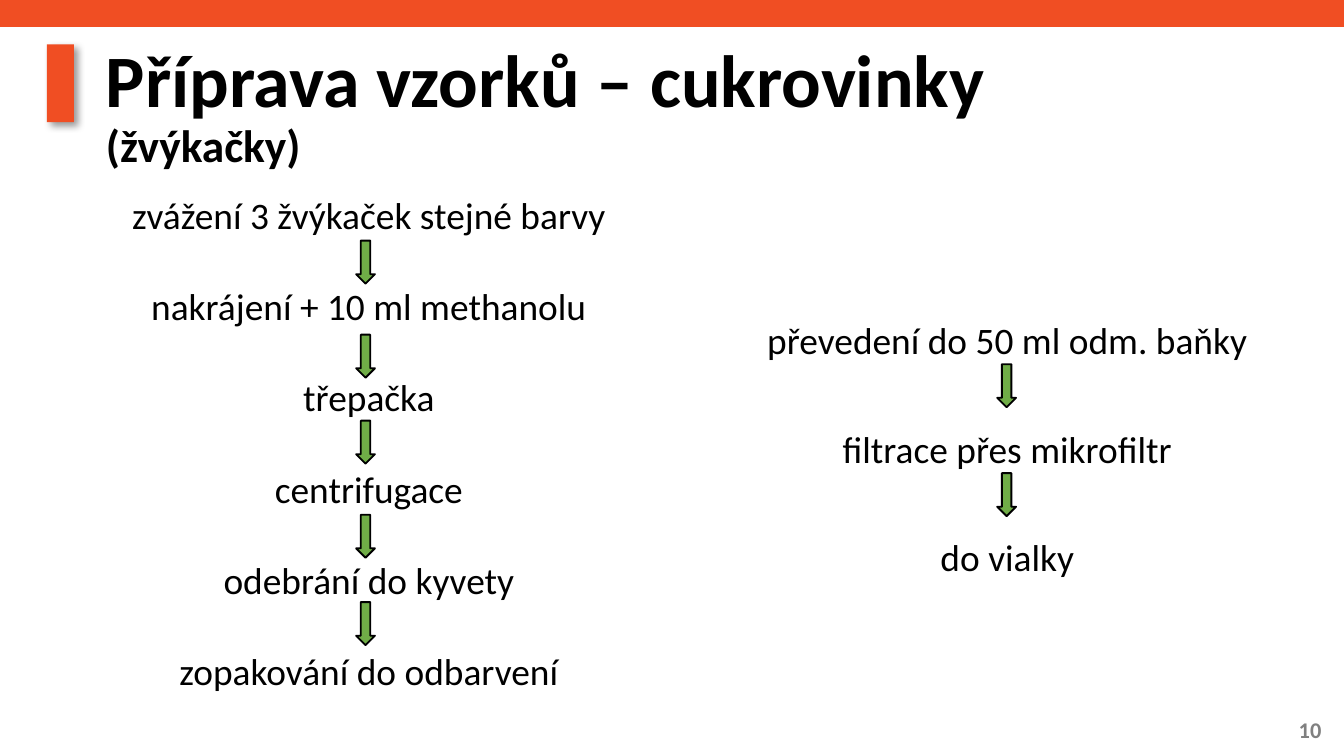
from dataclasses import dataclass

from lxml.etree import SubElement
from pptx import Presentation
from pptx.dml.color import RGBColor
from pptx.enum.shapes import MSO_SHAPE
from pptx.enum.text import MSO_ANCHOR, PP_ALIGN
from pptx.oxml.ns import qn
from pptx.util import Inches, Pt


@dataclass(frozen=True)
class Theme:
    font: str = "Calibri"
    accent: RGBColor = RGBColor(0xF0, 0x4E, 0x23)
    arrow: RGBColor = RGBColor(0x70, 0xAD, 0x47)
    text: RGBColor = RGBColor(0, 0, 0)
    muted: RGBColor = RGBColor(0x80, 0x80, 0x80)
    title_size: float = 39.6
    subtitle_size: float = 24.3
    step_size: float = 20
    number_size: float = 12


THEME = Theme()
ARROW_WIDTH, ARROW_HEIGHT = 0.14, 0.32


def add_block(slide, box, fill, preset=MSO_SHAPE.RECTANGLE):
    shape = slide.shapes.add_shape(preset, *map(Inches, box))
    shape.shadow.inherit = False
    shape.fill.solid()
    shape.fill.fore_color.rgb = fill
    shape.line.fill.background()
    return shape


def add_text_frame(slide, box, anchor):
    frame = slide.shapes.add_textbox(*map(Inches, box)).text_frame
    frame.word_wrap = True
    frame.vertical_anchor = anchor
    return frame


def style(paragraph, size, color=THEME.text, bold=False):
    font = paragraph.font
    font.name, font.size, font.bold = THEME.font, Pt(size), bold
    font.color.rgb = color


def add_soft_shadow(shape):
    effects = shape.element.spPr.find(qn("a:effectLst"))
    shadow = SubElement(effects, qn("a:outerShdw"), blurRad=str(Pt(4)),
                        dist=str(Pt(3)), dir=str(45 * 60000), rotWithShape="0")
    color = SubElement(shadow, qn("a:srgbClr"), val="000000")
    SubElement(color, qn("a:alpha"), val="40000")


def add_header(slide, box, title, subtitle):
    """Top band, accent bar and two-line title, placed from the corner of box."""
    left, top, width, height = box
    add_block(slide, (left, top, width, 0.2), THEME.accent)
    add_soft_shadow(add_block(slide, (left + 0.35, top + 0.33, 0.2, 0.58), THEME.accent))
    title_box = (left + 0.69, top + 0.3, width - 0.95, height - 0.3)
    paragraph = add_text_frame(slide, title_box, MSO_ANCHOR.MIDDLE).paragraphs[0]
    paragraph.line_spacing = 0.9
    style(paragraph, THEME.title_size, bold=True)
    paragraph.add_run().text = title
    paragraph.add_line_break()
    run = paragraph.add_run()
    run.text = subtitle
    run.font.size = Pt(THEME.subtitle_size)


def add_process(slide, box, steps, arrow_left, arrow_tops, line_spacing, gap):
    """Centred steps with down arrows; arrow offsets are relative to box."""
    left, top = box[:2]
    frame = add_text_frame(slide, box, MSO_ANCHOR.TOP)
    for index, step in enumerate(steps):
        paragraph = frame.add_paragraph() if index else frame.paragraphs[0]
        paragraph.text = step
        paragraph.alignment = PP_ALIGN.CENTER
        paragraph.line_spacing = line_spacing
        paragraph.space_before = Pt(gap if index else 0)
        style(paragraph, THEME.step_size)
    for arrow_top in arrow_tops:
        arrow_box = (left + arrow_left, top + arrow_top, ARROW_WIDTH, ARROW_HEIGHT)
        arrow = add_block(slide, arrow_box, THEME.arrow, MSO_SHAPE.DOWN_ARROW)
        arrow.line.color.rgb = THEME.text
        arrow.line.width = Pt(1)


def add_slide_number(slide, box, number):
    paragraph = add_text_frame(slide, box, MSO_ANCHOR.MIDDLE).paragraphs[0]
    paragraph.text = str(number)
    paragraph.alignment = PP_ALIGN.RIGHT
    style(paragraph, THEME.number_size, THEME.muted, bold=True)


def main():
    presentation = Presentation()
    presentation.slide_width = Inches(10)
    presentation.slide_height = Inches(10 * 9 / 16)
    slide = presentation.slides.add_slide(presentation.slide_layouts[6])

    add_header(slide, (0, 0, 10, 1.31), "Příprava vzorků – cukrovinky", "(žvýkačky)")
    add_process(
        slide, (0.69, 1.38, 4.11, 4.07),
        ["zvážení 3 žvýkaček stejné barvy", "nakrájení + 10 ml methanolu", "třepačka",
         "centrifugace", "odebrání do kyvety", "zopakování do odbarvení"],
        arrow_left=1.96, arrow_tops=[0.41, 1.11, 1.75, 2.45, 3.1],
        line_spacing=1, gap=24.9)
    add_process(
        slide, (5.44, 1.98, 4.11, 3.25),
        ["převedení do 50 ml odm. baňky", "filtrace přes mikrofiltr", "do vialky"],
        arrow_left=1.98, arrow_tops=[0.73, 1.54],
        line_spacing=2, gap=10)
    add_slide_number(slide, (9.25, 5.28, 0.68, 0.3), 10)
    presentation.save("out.pptx")


if __name__ == "__main__":
    main()
